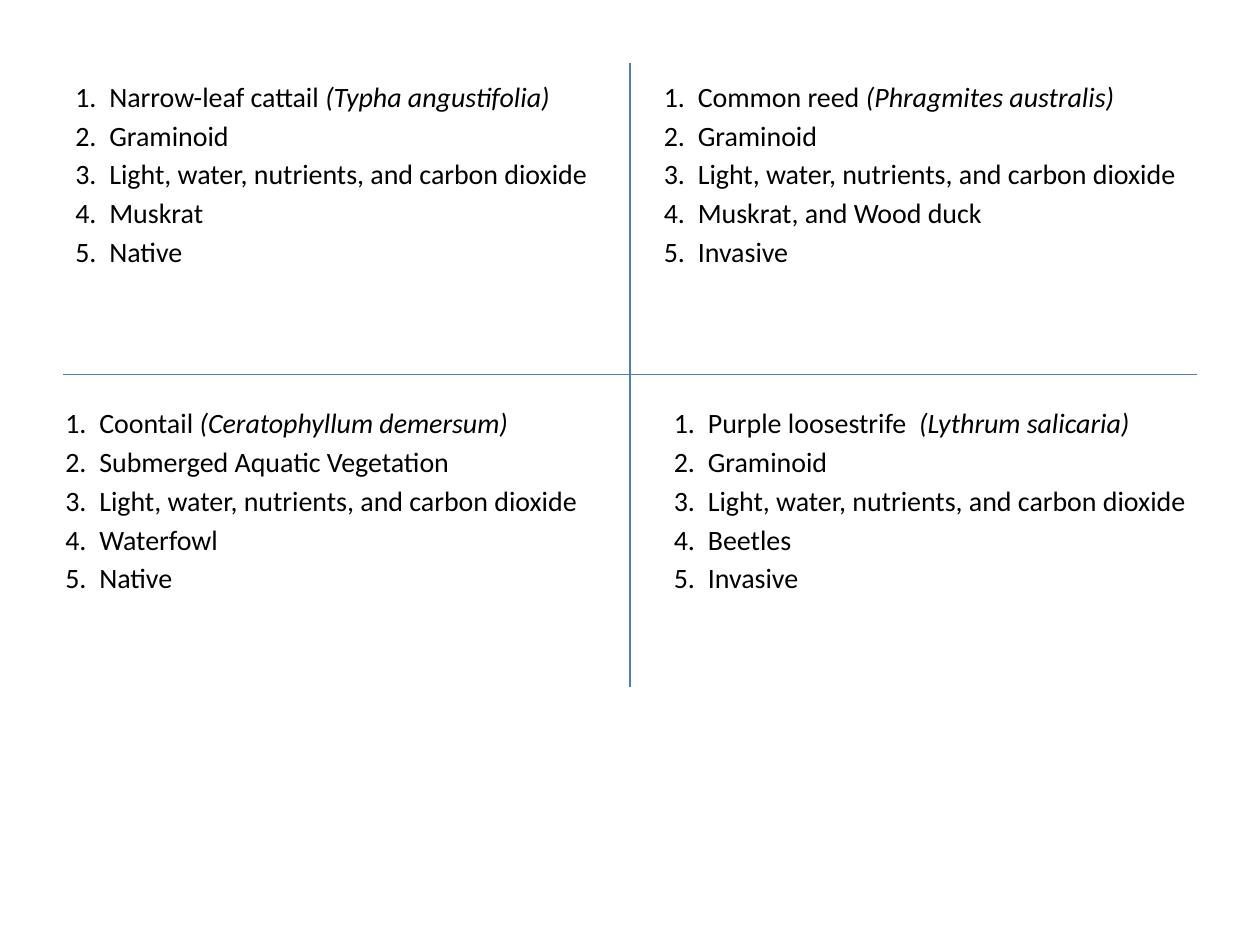
import pptx
import pptx.dml.color
import pptx.enum.shapes
import pptx.enum.text
import pptx.oxml
import pptx.oxml.ns
import pptx.util

Inches = pptx.util.Inches
Pt = pptx.util.Pt

COLORS = {"text": "000000", "divider": "4B7EBC"}
RESOURCES = "Light, water, nutrients, and carbon dioxide"
PLANTS = [
    (0.5, 0.58, "Narrow-leaf cattail ", "(Typha angustifolia)",
     ["Graminoid", RESOURCES, "Muskrat", "Native"]),
    (5.17, 0.58, "Common reed ", "(Phragmites australis)",
     ["Graminoid", RESOURCES, "Muskrat, and Wood duck", "Invasive"]),
    (0.42, 3.17, "Coontail ", "(Ceratophyllum demersum)",
     ["Submerged Aquatic Vegetation", RESOURCES, "Waterfowl", "Native"]),
    (5.25, 3.17, "Purple loosestrife  ", "(Lythrum salicaria)",
     ["Graminoid", RESOURCES, "Beetles", "Invasive"]),
]


class PlantSlide:
    font_name = "Calibri"
    font_size = Pt(16)
    space_before = Pt(3)
    hanging_indent = Inches(0.27)
    line_width = Pt(0.75)

    def __init__(self, presentation):
        self.slide = presentation.slides.add_slide(presentation.slide_layouts[6])

    def color(self, name):
        return pptx.dml.color.RGBColor.from_string(COLORS[name])

    def divider(self, left, top, right, bottom):
        connector = self.slide.shapes.add_connector(
            pptx.enum.shapes.MSO_CONNECTOR.STRAIGHT,
            Inches(left), Inches(top), Inches(right), Inches(bottom))
        connector.line.color.rgb = self.color("divider")
        connector.line.width = self.line_width
        properties = connector._element.spPr
        properties.append(pptx.oxml.parse_xml(
            f"<a:effectLst {pptx.oxml.ns.nsdecls('a')}/>"))

    def run(self, paragraph, text, italic=False):
        run = paragraph.add_run()
        run.text = text
        run.font.name = self.font_name
        run.font.size = self.font_size
        run.font.italic = italic
        run.font.color.rgb = self.color("text")

    def plant_list(self, left, top, common_name, latin_name, facts):
        shape = self.slide.shapes.add_textbox(
            Inches(left), Inches(top), Inches(4.36), Inches(1.66))
        frame = shape.text_frame
        frame.word_wrap = True
        frame.auto_size = pptx.enum.text.MSO_AUTO_SIZE.SHAPE_TO_FIT_TEXT
        for number, text in enumerate([common_name, *facts], start=1):
            paragraph = frame.paragraphs[0] if number == 1 else frame.add_paragraph()
            paragraph.space_before = self.space_before
            properties = paragraph._p.get_or_add_pPr()
            properties.set("marL", str(self.hanging_indent))
            properties.set("indent", str(-self.hanging_indent))
            self.run(paragraph, f"{number}.\t{text}")
            if number == 1:
                self.run(paragraph, latin_name, italic=True)


def main():
    presentation = pptx.Presentation()
    presentation.slide_width = Inches(10)
    presentation.slide_height = Inches(7.5)
    plant_slide = PlantSlide(presentation)
    plant_slide.divider(5, 0.5, 5, 5.45)
    plant_slide.divider(0.5, 2.97, 9.5, 2.97)
    for plant in PLANTS:
        plant_slide.plant_list(*plant)
    presentation.save("out.pptx")


if __name__ == "__main__":
    main()
